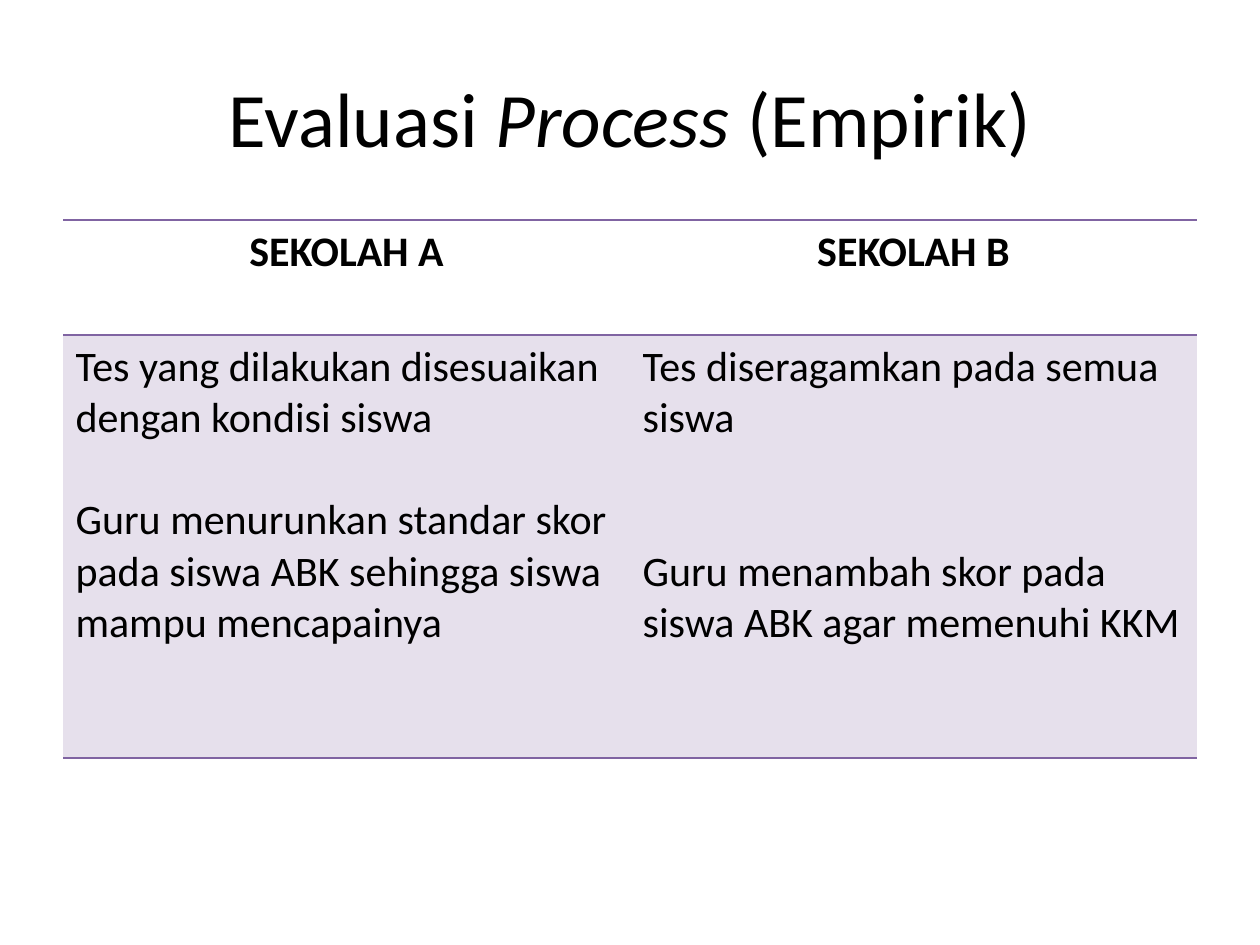
from dataclasses import dataclass

from lxml import etree
from pptx import Presentation
from pptx import util as u
from pptx.dml.color import RGBColor
from pptx.enum import text
from pptx.oxml import ns

FONT = "Calibri"
INK = "000000"
RULE = "8064A2"
TINT = "E6E0EC"


@dataclass
class Para:
    words: str
    gap: int = 0


@dataclass
class Row:
    high: int
    cells: list[list[Para]]
    head: bool = False


ROWS = [
    Row(115, [[Para("SEKOLAH A")], [Para("SEKOLAH B")]], head=True),
    Row(423, [
        [Para("Tes yang dilakukan disesuaikan dengan kondisi siswa"),
         Para("Guru menurunkan standar skor pada siswa ABK sehingga siswa "
              "mampu mencapainya", 1)],
        [Para("Tes diseragamkan pada semua siswa"),
         Para("Guru menambah skor pada siswa ABK agar memenuhi KKM", 2)],
    ]),
]


def px(n: int) -> int:
    return u.Emu(round(n * 914400 / 126))


def tone(code: str) -> RGBColor:
    return RGBColor.from_string(code)


def add_run(par, words: str, size: int, bold: bool = False,
            slant: bool = False) -> None:
    run = par.add_run()
    run.text = words
    font = run.font
    font.name, font.size = FONT, u.Pt(size)
    font.bold, font.italic = bold, slant
    font.color.rgb = tone(INK)


def add_edge(cell, side: str, code: str | None) -> None:
    props = cell._tc.get_or_add_tcPr()
    line = etree.SubElement(props, ns.qn(f"a:ln{side}"), w=str(u.Pt(1)))
    if code is None:
        etree.SubElement(line, ns.qn("a:noFill"))
        return
    fill = etree.SubElement(line, ns.qn("a:solidFill"))
    etree.SubElement(fill, ns.qn("a:srgbClr"), val=code)


def fill_cell(cell, paras: list[Para], head: bool) -> None:
    for side in "LRTB":
        add_edge(cell, side, RULE if side in "TB" else None)
    if head:
        cell.fill.background()
    else:
        cell.fill.solid()
        cell.fill.fore_color.rgb = tone(TINT)
    frame = cell.text_frame
    for i, item in enumerate(paras):
        par = frame.add_paragraph() if i else frame.paragraphs[0]
        par.alignment = text.PP_ALIGN.CENTER if head else text.PP_ALIGN.LEFT
        if item.gap:
            par.space_before = u.Pt(29.3 * item.gap)
        add_run(par, item.words, 24, bold=head)


def add_title(slide) -> None:
    title = slide.shapes.title
    title.left, title.top = px(63), px(38)
    title.width, title.height = px(1134), px(158)
    frame = title.text_frame
    frame.vertical_anchor = text.MSO_ANCHOR.MIDDLE
    par = frame.paragraphs[0]
    par.alignment = text.PP_ALIGN.CENTER
    add_run(par, "Evaluasi ", 44)
    add_run(par, "Process ", 44, slant=True)
    add_run(par, "(Empirik)", 44)


def add_grid(slide, rows: list[Row]) -> None:
    high = sum(row.high for row in rows)
    grid = slide.shapes.add_table(len(rows), len(rows[0].cells), px(63),
                                  px(220), px(1134), px(high)).table
    grid.first_row = grid.horz_banding = False
    for r, row in enumerate(rows):
        grid.rows[r].height = px(row.high)
        for c, paras in enumerate(row.cells):
            fill_cell(grid.cell(r, c), paras, row.head)


def main() -> None:
    deck = Presentation()
    deck.slide_width, deck.slide_height = px(1260), px(945)
    slide = deck.slides.add_slide(deck.slide_layouts[5])
    add_title(slide)
    add_grid(slide, ROWS)
    deck.save("out.pptx")


if __name__ == "__main__":
    main()
